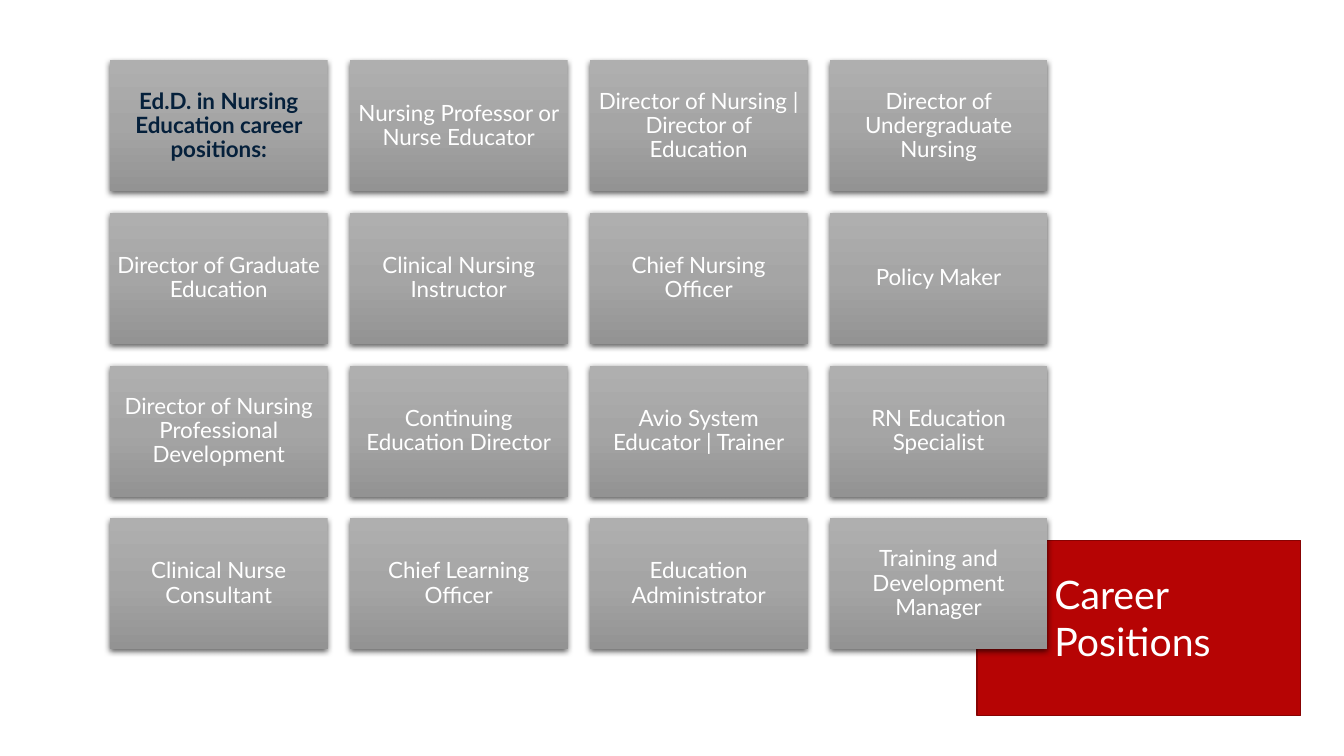
from copy import deepcopy

from pptx import Presentation
from pptx.dml.color import RGBColor
from pptx.enum.shapes import MSO_SHAPE
from pptx.enum.text import MSO_ANCHOR, PP_ALIGN
from pptx.oxml import parse_xml
from pptx.oxml.ns import nsdecls, qn
from pptx.util import Inches, Pt

RECTANGLE = MSO_SHAPE.RECTANGLE
MIDDLE = MSO_ANCHOR.MIDDLE
CENTER = PP_ALIGN.CENTER

FONT = "Lato"
WHITE = RGBColor(0xFF, 0xFF, 0xFF)
NAVY = RGBColor(0x05, 0x20, 0x3B)
RED = RGBColor(0xB6, 0x04, 0x04)
DARK_RED = RGBColor(0x87, 0x03, 0x03)
CARD_GRADIENT = [
    (0, RGBColor(0xAF, 0xAF, 0xAF)),
    (0.5, RGBColor(0xA5, 0xA5, 0xA5)),
    (1, RGBColor(0x93, 0x93, 0x93)),
]
CARD_SHADOW = (
    f'<a:outerShdw {nsdecls("a")} blurRad="57150" dist="19050" dir="5400000" '
    'algn="ctr" rotWithShape="0"><a:srgbClr val="000000">'
    '<a:alpha val="63000"/></a:srgbClr></a:outerShdw>'
)

COLUMNS = 4
LEFT, TOP = 1.09, 0.6
CARD_WIDTH, CARD_HEIGHT = 2.16, 1.3
COLUMN_STEP, ROW_STEP = 2.38, 1.514
CARD_INSET = Inches(0.07)
HEADING = "Ed.D. in Nursing Education career positions:"
CARDS = [
    HEADING,
    "Nursing Professor or Nurse Educator",
    "Director of Nursing |Director of Education",
    "Director of Undergraduate Nursing",
    "Director of Graduate Education",
    "Clinical Nursing Instructor",
    "Chief Nursing Officer",
    "Policy Maker",
    "Director of Nursing Professional Development",
    "Continuing Education Director",
    "Avio System Educator | Trainer",
    "RN Education Specialist",
    "Clinical Nurse Consultant",
    "Chief Learning Officer",
    "Education Administrator",
    "Training and Development Manager",
]


def style_card_surface(card):
    """Give the card its three-stop gradient and soft drop shadow."""
    card.line.fill.background()
    card.fill.gradient()
    card.fill.gradient_angle = 270
    stop_list = card.fill._xPr.find(qn("a:gradFill")).find(qn("a:gsLst"))
    stop_list.append(deepcopy(stop_list[0]))
    for stop, (position, color) in zip(card.fill.gradient_stops, CARD_GRADIENT):
        stop.position = position
        stop.color.rgb = color
    card.shadow.inherit = False
    effects = card._element.spPr.find(qn("a:effectLst"))
    effects.append(parse_xml(CARD_SHADOW))


def set_text(text_frame, text, size, color):
    text_frame.word_wrap = True
    text_frame.text = text
    paragraph = text_frame.paragraphs[0]
    font = paragraph.runs[0].font
    font.name = FONT
    font.size = Pt(size)
    font.color.rgb = color
    return paragraph


presentation = Presentation()
presentation.slide_width = Inches(13.33)
presentation.slide_height = Inches(7.5)
slide = presentation.slides.add_slide(presentation.slide_layouts[6])

# Red panel behind the title
panel = slide.shapes.add_shape(
    RECTANGLE, Inches(9.69), Inches(5.36), Inches(3.21), Inches(1.74)
)
panel.shadow.inherit = False
panel.fill.solid()
panel.fill.fore_color.rgb = RED
panel.line.color.rgb = DARK_RED
panel.line.width = Pt(1)

# Grid of career positions
for index, position_name in enumerate(CARDS):
    row, column = divmod(index, COLUMNS)
    card = slide.shapes.add_shape(
        RECTANGLE,
        Inches(LEFT + column * COLUMN_STEP),
        Inches(TOP + row * ROW_STEP),
        Inches(CARD_WIDTH),
        Inches(CARD_HEIGHT),
    )
    style_card_surface(card)

    is_heading = position_name == HEADING
    text_frame = card.text_frame
    text_frame.vertical_anchor = MIDDLE
    text_frame.margin_left = text_frame.margin_right = CARD_INSET
    text_frame.margin_top = text_frame.margin_bottom = CARD_INSET
    paragraph = set_text(text_frame, position_name, 16, NAVY if is_heading else WHITE)
    paragraph.alignment = CENTER
    paragraph.line_spacing = 0.9
    paragraph.runs[0].font.bold = is_heading

# Title
title = slide.shapes.add_textbox(
    Inches(10.36), Inches(5.61), Inches(2.34), Inches(1.04)
)
set_text(title.text_frame, "Career Positions", 28, WHITE)

presentation.save("out.pptx")
